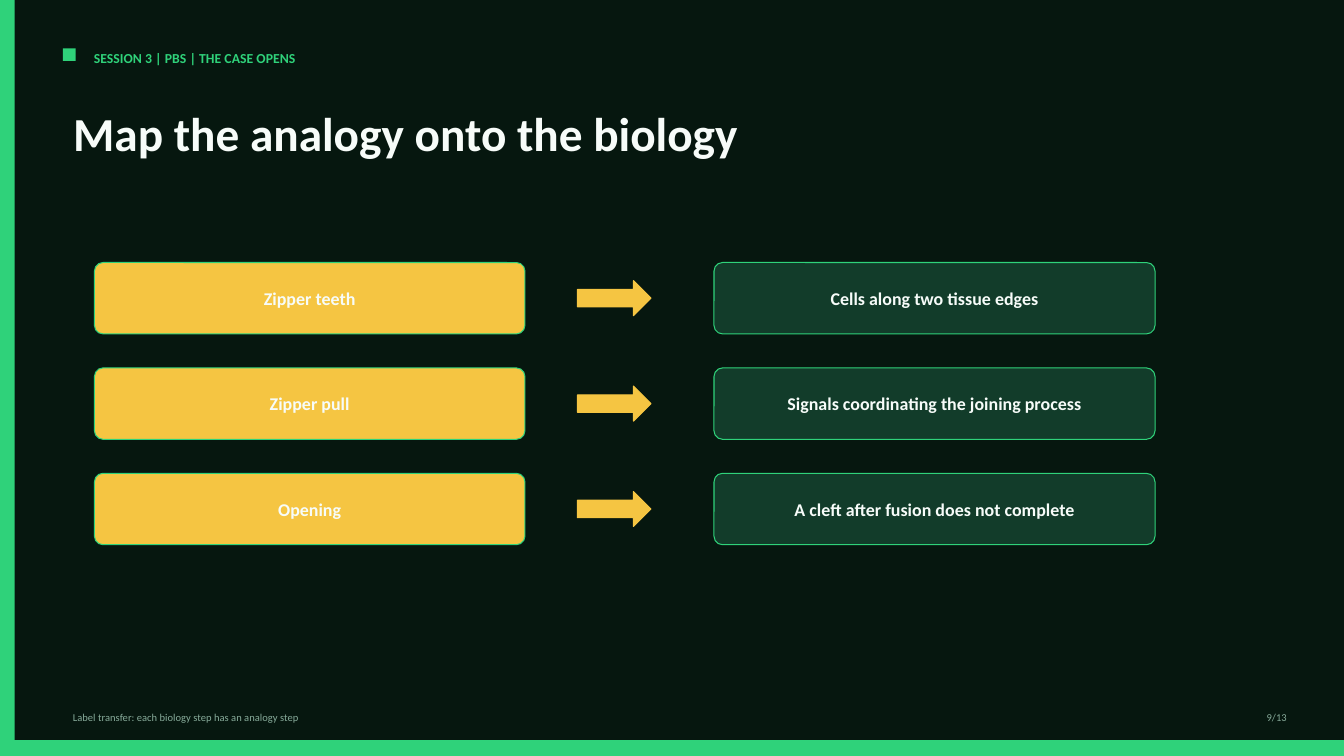
"""Build the zipper analogy slide of the biology session."""
from pptx import Presentation, util as u
from pptx.dml import color
from pptx.enum import shapes, text

GREEN, GOLD, FOREST = "2FD27A", "F5C542", "123C2A"
NIGHT, WHITE, MUTED = "06170F", "F7FCF9", "87AB9A"
SHAPE, ALIGN, ANCHOR = shapes.MSO_SHAPE, text.PP_ALIGN, text.MSO_ANCHOR

ANALOGIES = [
    ("Zipper teeth", "Cells along two tissue edges"),
    ("Zipper pull", "Signals coordinating the joining process"),
    ("Opening", "A cleft after fusion does not complete"),
]
FIRST_TOP, ROW_PITCH, CARD_HEIGHT, ARROW_HEIGHT = 187.5, 75.3, 51, 25


def rgb(code):
    return color.RGBColor.from_string(code)


class SlideBuilder:
    font = "Calibri"

    def __init__(self, deck):
        self.page = deck.slides.add_slide(deck.slide_layouts[5])
        background = self.page.background.fill
        background.solid()
        background.fore_color.rgb = rgb(NIGHT)

    def set_words(self, frame, words, size, ink, bold=False, align=ALIGN.LEFT, anchor=ANCHOR.TOP):
        frame.text = words
        frame.word_wrap = True
        frame.auto_size = text.MSO_AUTO_SIZE.NONE
        frame.vertical_anchor = anchor
        para = frame.paragraphs[0]
        para.alignment = align
        for span in para.runs:
            span.font.name = self.font
            span.font.size = u.Pt(size)
            span.font.bold = bold
            span.font.color.rgb = rgb(ink)
        return para

    def title(self, words, left, top, width, height):
        box = self.page.shapes.title
        box.left, box.top = u.Pt(left), u.Pt(top)
        box.width, box.height = u.Pt(width), u.Pt(height)
        self.set_words(box.text_frame, words, 33.8, WHITE, bold=True).line_spacing = 0.92

    def label(self, words, left, top, width, height, size, ink, **style):
        box = self.page.shapes.add_textbox(u.Pt(left), u.Pt(top), u.Pt(width), u.Pt(height))
        self.set_words(box.text_frame, words, size, ink, **style)

    def shape(self, kind, left, top, width, height, fill, line=None):
        box = self.page.shapes.add_shape(kind, u.Pt(left), u.Pt(top), u.Pt(width), u.Pt(height))
        box.shadow.inherit = False
        box.fill.solid()
        box.fill.fore_color.rgb = rgb(fill)
        if line:
            box.line.color.rgb = rgb(line)
            box.line.width = u.Pt(0.75)
        else:
            box.line.fill.background()
        return box

    def card(self, words, left, top, width, fill):
        box = self.shape(SHAPE.ROUNDED_RECTANGLE, left, top, width, CARD_HEIGHT, fill, GREEN)
        box.adjustments[0] = 0.12
        self.set_words(box.text_frame, words, 12.8, WHITE, bold=True,
                       align=ALIGN.CENTER, anchor=ANCHOR.MIDDLE)


def main():
    deck = Presentation()
    deck.slide_width, deck.slide_height = u.Pt(960), u.Pt(540)
    slide = SlideBuilder(deck)

    slide.shape(SHAPE.RECTANGLE, 0, 0, 10.5, 540, GREEN)
    slide.shape(SHAPE.RECTANGLE, 0, 528.75, 960, 11.25, GREEN)
    slide.shape(SHAPE.RECTANGLE, 45, 34.5, 9, 9, GREEN)
    slide.label("SESSION 3 | PBS | THE CASE OPENS", 60, 32.25, 465, 18, 9.8, GREEN, bold=True)
    slide.label("Label transfer: each biology step has an analogy step",
                45, 504, 675, 13.5, 7.5, MUTED)
    slide.label("9/13", 866.25, 504, 60, 13.5, 7.5, MUTED, align=ALIGN.RIGHT)
    slide.title("Map the analogy onto the biology", 45, 75, 825, 63)

    for row, (analogy, biology) in enumerate(ANALOGIES):
        top = FIRST_TOP + row * ROW_PITCH
        arrow_top = top + (CARD_HEIGHT - ARROW_HEIGHT) / 2
        slide.card(analogy, 67.5, top, 307.5, GOLD)
        slide.shape(SHAPE.RIGHT_ARROW, 412.5, arrow_top, 52.5, ARROW_HEIGHT, GOLD, GOLD)
        slide.card(biology, 510, top, 315, FOREST)

    deck.save("out.pptx")


if __name__ == "__main__":
    main()
